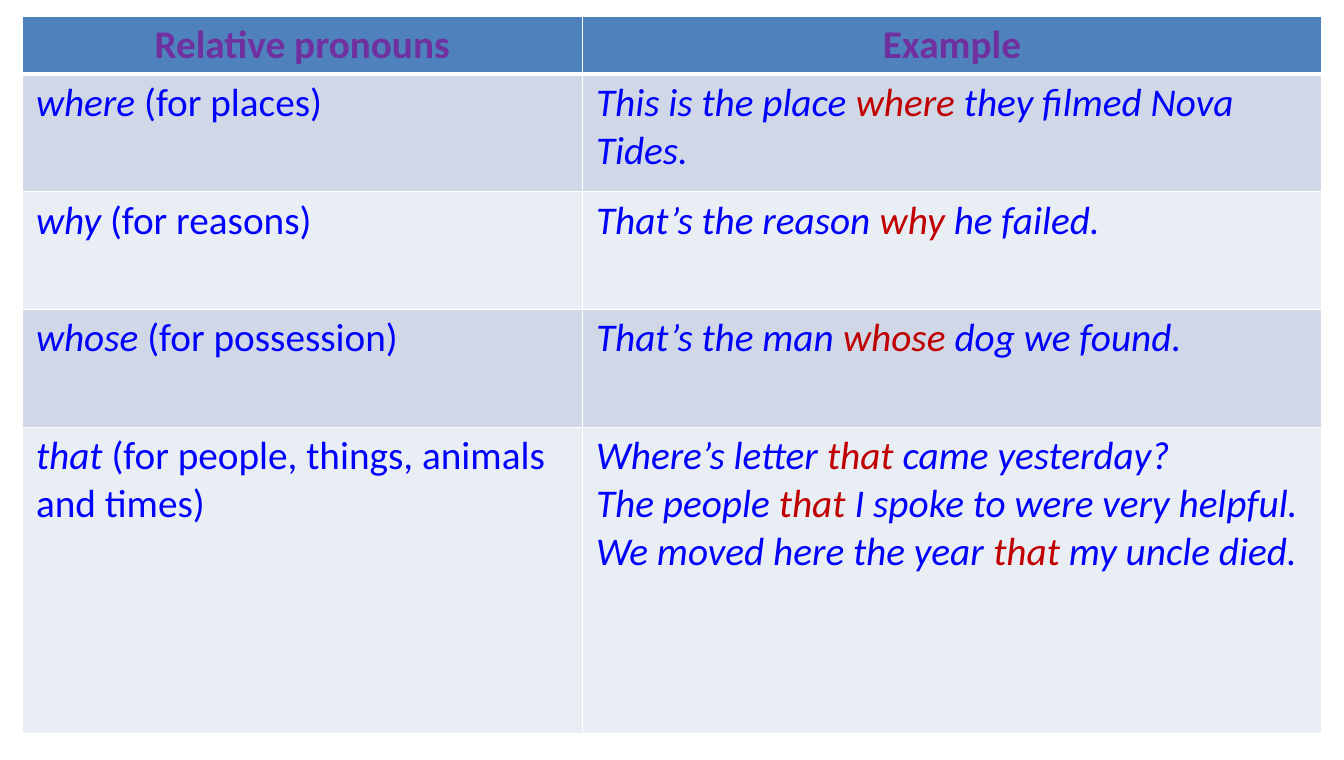
import pptx
import pptx.dml.color
import pptx.enum.text
import pptx.oxml
import pptx.util
from pptx.oxml.ns import nsdecls

COLUMNS = ROWS = 60  # grid units across and down the slide
HEADER, BAND_DARK, BAND_LIGHT = "4F81BD", "D0D8E8", "E9EDF4"
PURPLE, BLUE, RED, WHITE = "7030A0", "0000FF", "C00000", "FFFFFF"


def rgb(value):
    return pptx.dml.color.RGBColor.from_string(value)


class Deck:
    font, size = "Calibri", 29
    inset_x, inset_y = 0.14, 0.05

    def __init__(self, width, height):
        self.prs = pptx.Presentation()
        self.prs.slide_width = pptx.util.Inches(width)
        self.prs.slide_height = pptx.util.Inches(height)
        self.s = self.prs.slides.add_slide(self.prs.slide_layouts[6])

    def x(self, columns):
        return round(self.prs.slide_width * columns / COLUMNS)

    def y(self, rows):
        return round(self.prs.slide_height * rows / ROWS)

    def table(self, left, top, widths, heights):
        table = self.s.shapes.add_table(
            len(heights), len(widths), self.x(left), self.y(top),
            self.x(sum(widths)), self.y(sum(heights))).table
        table.first_row = table.horz_banding = False
        for column, width in zip(table.columns, widths):
            column.width = self.x(width)
        for row, height in zip(table.rows, heights):
            row.height = self.y(height)
        return table

    def cell(self, cell, lines, fill, top=1, bottom=1, centred=False):
        cell.margin_left = cell.margin_right = pptx.util.Inches(self.inset_x)
        cell.margin_top = cell.margin_bottom = pptx.util.Inches(self.inset_y)
        self.borders(cell, L=1, R=1, T=top, B=bottom)
        cell.fill.solid()
        cell.fill.fore_color.rgb = rgb(fill)
        p = cell.text_frame.paragraphs[0]
        if centred:
            p.alignment = pptx.enum.text.PP_ALIGN.CENTER
        for i, runs in enumerate(lines):
            if i:
                p.add_line_break()
            for run in runs:
                self.run(p, *run)

    def borders(self, cell, **widths):
        tc_pr = cell._tc.get_or_add_tcPr()
        for side, points in widths.items():
            tc_pr.append(pptx.oxml.parse_xml(
                f'<a:ln{side} {nsdecls("a")} w="{pptx.util.Pt(points)}"><a:solidFill>'
                f'<a:srgbClr val="{WHITE}"/></a:solidFill></a:ln{side}>'))

    def run(self, p, text, color, bold=False, italic=False):
        r = p.add_run()
        r.text = text
        r.font.name, r.font.size = self.font, pptx.util.Pt(self.size)
        r.font.bold, r.font.italic = bold, italic
        r.font.color.rgb = rgb(color)


# Content: pronoun, use, and example lines as (before, pronoun, after)
headings = ["Relative pronouns", "Example"]
pronouns = [
    ("where", " (for places)",
     [("This is the place ", "where ", "they filmed Nova Tides.")]),
    ("why", " (for reasons)",
     [("That’s the reason ", "why", " he failed.")]),
    ("whose", " (for possession)",
     [("That’s the man ", "whose", " dog we found.")]),
    ("that", " (for people, things, animals and times)",
     [("Where’s letter ", "that ", "came yesterday?"),
      ("The people ", "that ", "I spoke to were very helpful."),
      ("We moved here the year ", "that", " my uncle died.")]),
]

deck = Deck(13.8, 7.8)
table = deck.table(1, 1.3, widths=[25, 33], heights=[4.55, 9.3, 9.3, 9.3, 24.2])

# Header row
for col, heading in enumerate(headings):
    deck.cell(table.cell(0, col), [[(heading, PURPLE, True)]], HEADER,
              bottom=3, centred=True)

# Pronoun rows
for row, (pronoun, use, examples) in enumerate(pronouns, start=1):
    fill = BAND_DARK if row % 2 else BAND_LIGHT
    top = 3 if row == 1 else 1
    deck.cell(table.cell(row, 0),
              [[(pronoun, BLUE, False, True), (use, BLUE)]], fill, top)
    lines = [[(text, color, False, True)
              for text, color in zip(example, (BLUE, RED, BLUE))]
             for example in examples]
    deck.cell(table.cell(row, 1), lines, fill, top)

deck.prs.save("out.pptx")
